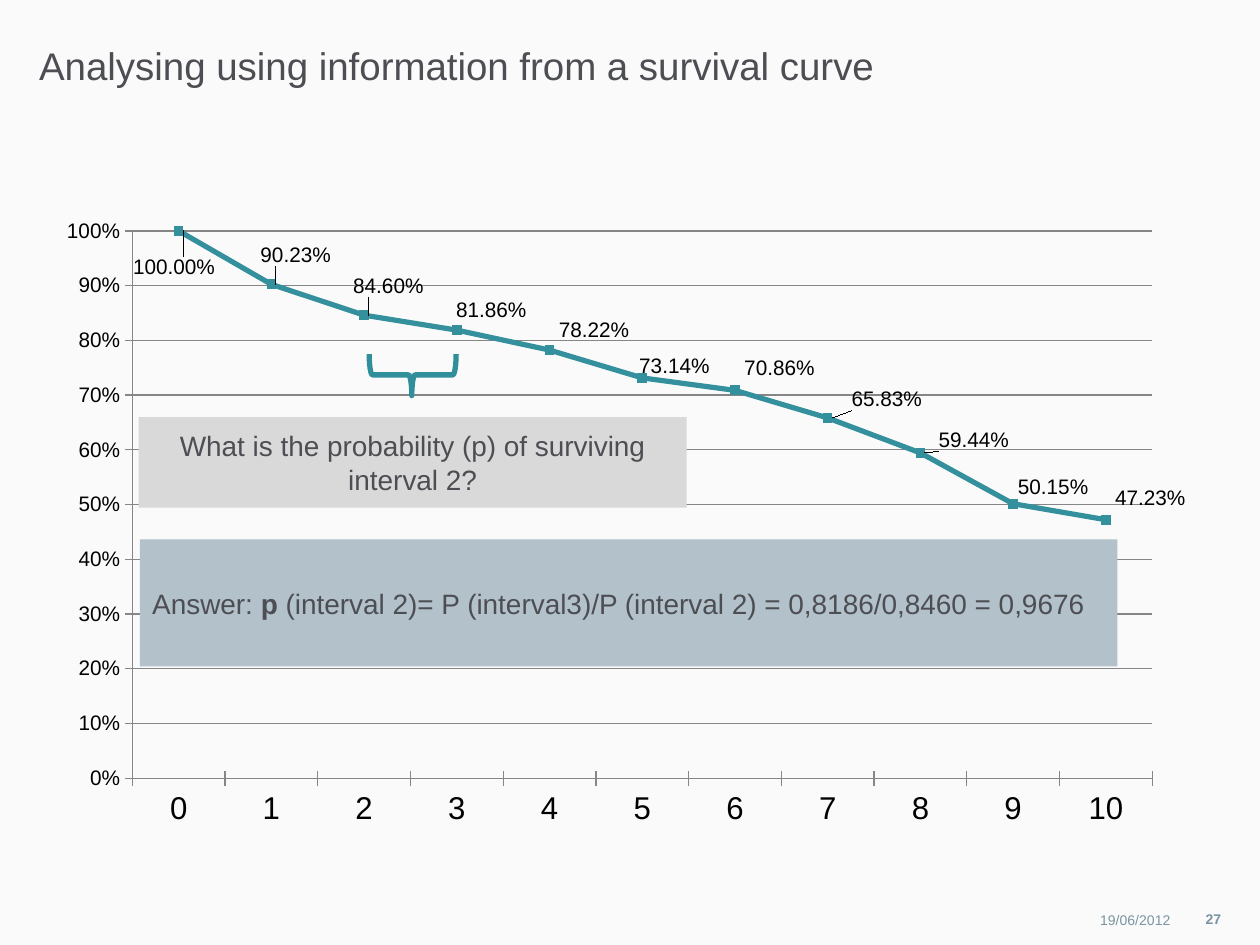
from lxml import etree
from pptx import Presentation
from pptx.chart.data import CategoryChartData
from pptx.dml.color import RGBColor
from pptx.enum.chart import (XL_CHART_TYPE, XL_LABEL_POSITION,
                             XL_MARKER_STYLE, XL_TICK_MARK)
from pptx.enum.shapes import MSO_SHAPE
from pptx.enum.text import MSO_ANCHOR, PP_ALIGN
from pptx.oxml import parse_xml
from pptx.oxml.ns import nsdecls, qn
from pptx.util import Inches, Pt

FONT = "Arial"
COLORS = {
    "background": "FAFAFA", "text": "4D4E53", "footer": "7A94A3",
    "curve": "34909C", "brace": "308F9B", "answer": "B2C1CA",
    "question": "D9D9D9", "axis": "868686", "chart_text": "000000",
}
TITLE = "Analysing using information from a survival curve"
QUESTION = "What is the probability (p) of surviving interval 2?"
ANSWER = [
    ("Answer: ", False),
    ("p", True),
    (" (interval 2)= P (interval3)/P (interval 2) = 0,8186/0,8460 = 0,9676", False),
]
DATE, PAGE = "19/06/2012", "27"

# Survival at each interval, with its label's shift (right, down) in inches
SURVIVAL = [
    (1, -0.44, 0.29), (0.9023, -0.16, -0.23), (0.846, -0.16, -0.23),
    (0.8186, -0.08, -0.16), (0.7822, 0, -0.16), (0.7314, -0.1, -0.09),
    (0.7086, 0, -0.18), (0.6583, 0.12, -0.15), (0.5944, 0.07, -0.1),
    (0.5015, -0.04, -0.13), (0.4723, 0, -0.17),
]
CHART_BOX = (0.41, 1.7, 9, 5.1)
PLOT_LAYOUT = {"x": 0.072, "y": 0.026, "w": 0.91, "h": 0.852}


def color(name):
    return RGBColor.from_string(COLORS[name])


def style_font(font, size, color_name, bold=False):
    font.name, font.size, font.bold = FONT, Pt(size), bold
    font.color.rgb = color(color_name)


def write_text(shape, runs, size=16, color_name="text", align=PP_ALIGN.LEFT,
               anchor=MSO_ANCHOR.MIDDLE, margins=(0.1, 0.05)):
    """Fill a shape with one paragraph of (text, bold) runs."""
    frame = shape.text_frame
    frame.word_wrap = True
    frame.vertical_anchor = anchor
    frame.margin_left = frame.margin_right = Inches(margins[0])
    frame.margin_top = frame.margin_bottom = Inches(margins[1])
    paragraph = frame.paragraphs[0]
    paragraph.alignment = align
    for text, bold in runs:
        run = paragraph.add_run()
        run.text = text
        style_font(run.font, size, color_name, bold)


def add_panel(slide, box, fill, runs, align):
    panel = slide.shapes.add_shape(MSO_SHAPE.RECTANGLE, *map(Inches, box))
    panel.shadow.inherit = False
    panel.fill.solid()
    panel.fill.fore_color.rgb = color(fill)
    panel.line.fill.background()
    write_text(panel, runs, align=align)


def manual_layout(values, inner=False):
    layout = etree.Element(qn("c:layout"))
    manual = etree.SubElement(layout, qn("c:manualLayout"))
    settings = dict(values)
    if inner:
        settings = {"layoutTarget": "inner", "xMode": "edge", "yMode": "edge", **settings}
    for tag, value in settings.items():
        etree.SubElement(manual, qn(f"c:{tag}")).set("val", str(value))
    return layout


def style_axis(axis, size):
    axis.major_tick_mark = XL_TICK_MARK.CROSS
    axis.format.line.color.rgb = color("axis")
    style_font(axis.tick_labels.font, size, "chart_text")


def add_point_label(series, index, right, down):
    label = series.points[index].data_label
    style_font(label.font, 12, "chart_text")
    label.position = XL_LABEL_POSITION.RIGHT
    element = series._element.find(qn("c:dLbls")).findall(qn("c:dLbl"))[index]
    shift = {"x": round(right / CHART_BOX[2], 3), "y": round(down / CHART_BOX[3], 3)}
    element.insert(1, manual_layout(shift))
    element.insert(2, parse_xml(
        f'<c:numFmt {nsdecls("c")} formatCode="0.00%" sourceLinked="0"/>'))


def add_survival_chart(slide):
    data = CategoryChartData(number_format="0.00%")
    data.categories = [str(interval) for interval in range(len(SURVIVAL))]
    data.add_series("Series 1", [point[0] for point in SURVIVAL])
    chart = slide.shapes.add_chart(
        XL_CHART_TYPE.LINE_MARKERS, *map(Inches, CHART_BOX), data).chart
    chart.has_legend = chart.has_title = False
    style_font(chart.font, 18, "chart_text")
    chart.plots[0].vary_by_categories = False

    plot_area = chart._chartSpace.chart.plotArea
    for layout in plot_area.findall(qn("c:layout")):
        plot_area.remove(layout)
    plot_area.insert(0, manual_layout(PLOT_LAYOUT, inner=True))

    style_axis(chart.category_axis, 18)
    percent = chart.value_axis
    style_axis(percent, 12)
    percent.minimum_scale, percent.maximum_scale, percent.major_unit = 0, 1, 0.1
    percent.has_major_gridlines = True
    percent.major_gridlines.format.line.color.rgb = color("axis")
    percent.tick_labels.number_format = "0%"
    percent.tick_labels.number_format_is_linked = False

    curve = chart.plots[0].series[0]
    curve.smooth = False
    curve.format.line.width = Pt(3)
    curve.format.line.color.rgb = color("curve")
    curve.marker.style, curve.marker.size = XL_MARKER_STYLE.SQUARE, 5
    curve.marker.format.fill.solid()
    curve.marker.format.fill.fore_color.rgb = color("curve")
    curve.marker.format.line.color.rgb = color("curve")
    for index, (_, right, down) in enumerate(SURVIVAL):
        add_point_label(curve, index, right, down)


def add_interval_brace(slide):
    brace = slide.shapes.add_shape(
        MSO_SHAPE.LEFT_BRACE, *map(Inches, (3.11, 2.63, 0.33, 0.69)))
    brace.rotation = 270
    brace.adjustments[0], brace.adjustments[1] = 0.08, 0.49
    brace.shadow.inherit = False
    brace.fill.background()
    brace.line.color.rgb = color("brace")
    brace.line.width = Pt(3)


def main():
    presentation = Presentation()
    presentation.slide_width, presentation.slide_height = Inches(10), Inches(7.5)
    slide = presentation.slides.add_slide(presentation.slide_layouts[5])
    slide.background.fill.solid()
    slide.background.fill.fore_color.rgb = color("background")

    title = slide.shapes.title
    title.left, title.top, title.width, title.height = map(
        Inches, (0.31, 0.33, 7.48, 0.79))
    write_text(title, [(TITLE, False)], size=22, anchor=MSO_ANCHOR.TOP, margins=(0, 0))

    footers = [
        (DATE, (8.38, 7.15, 0.91, 0.3), False, (0, 0)),
        (PAGE, (9.31, 7.14, 0.48, 0.3), True, (0.1, 0.05)),
    ]
    for text, box, bold, margins in footers:
        footer = slide.shapes.add_textbox(*map(Inches, box))
        write_text(footer, [(text, bold)], size=8, color_name="footer",
                   align=PP_ALIGN.RIGHT, margins=margins)

    add_survival_chart(slide)
    add_interval_brace(slide)
    add_panel(slide, (1.11, 4.28, 7.76, 1.01), "answer", ANSWER, PP_ALIGN.LEFT)
    add_panel(slide, (1.1, 3.31, 4.35, 0.72), "question", [(QUESTION, False)],
              PP_ALIGN.CENTER)
    presentation.save("out.pptx")


if __name__ == "__main__":
    main()
